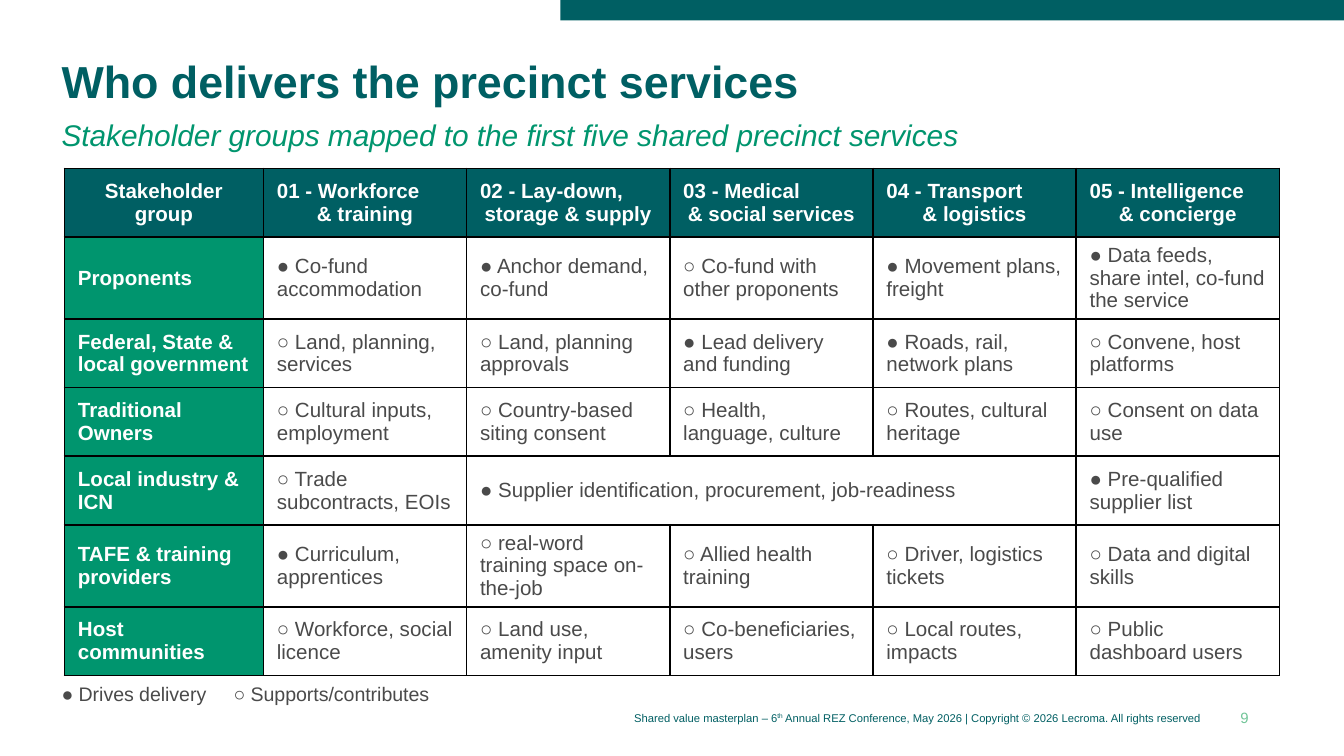
from lxml.etree import SubElement as Sub
from pptx import Presentation
from pptx.dml.color import RGBColor as RGB
from pptx.enum.shapes import MSO_SHAPE as SHAPE
from pptx.enum.text import MSO_ANCHOR as ANCHOR, PP_ALIGN as ALIGN
from pptx.oxml.ns import qn
from pptx.util import Inches, Pt

WIDE, HIGH = Inches(10), Inches(10 * 9 / 16)
FONT = "Arial"
HUES = {
    "teal": "005F63",
    "green": "00956E",
    "mint": "71C598",
    "grey": "4A4A4A",
    "white": "FFFFFF",
    "black": "000000",
}

# A line break in a heading puts its second line in the centre
HEADS = [
    "Stakeholder group",
    "01 - Workforce\n& training",
    "02 - Lay-down,\nstorage & supply",
    "03 - Medical\n& social services",
    "04 - Transport\n& logistics",
    "05 - Intelligence\n& concierge",
]
# None continues the cell to its left
ROWS = [
    ["Proponents", "● Co-fund accommodation", "● Anchor demand, co-fund",
     "○ Co-fund with other proponents", "● Movement plans, freight",
     "● Data feeds, share intel, co-fund the service"],
    ["Federal, State & local government", "○ Land, planning, services",
     "○ Land, planning approvals", "● Lead delivery and funding",
     "● Roads, rail, network plans", "○ Convene, host platforms"],
    ["Traditional Owners", "○ Cultural inputs, employment",
     "○ Country-based siting consent", "○ Health, language, culture",
     "○ Routes, cultural heritage", "○ Consent on data use"],
    ["Local industry & ICN", "○ Trade subcontracts, EOIs",
     "● Supplier identification, procurement, job-readiness", None, None,
     "● Pre-qualified supplier list"],
    ["TAFE & training providers", "● Curriculum, apprentices",
     "○ real-word training space on-the-job", "○ Allied health training",
     "○ Driver, logistics tickets", "○ Data and digital skills"],
    ["Host communities", "○ Workforce, social licence",
     "○ Land use, amenity input", "○ Co-beneficiaries, users",
     "○ Local routes, impacts", "○ Public dashboard users"],
]


def hue(name):
    return RGB.from_string(HUES[name])


def place(x, y, w, h):
    """Turn percentages of the slide into lengths."""
    return [int(side * part / 100)
            for side, part in zip((WIDE, HIGH, WIDE, HIGH), (x, y, w, h))]


def style(para, size, color, bold=False, slant=False, align=ALIGN.LEFT):
    para.alignment = align
    font = para.font
    font.name, font.size = FONT, Pt(size)
    font.bold, font.italic = bold, slant
    font.color.rgb = hue(color)


def add_text(slide, box, text, size, color, anchor=ANCHOR.TOP, space=1,
             tab=None, **look):
    frame = slide.shapes.add_textbox(*place(*box)).text_frame
    frame.word_wrap = True
    frame.vertical_anchor = anchor
    para = frame.paragraphs[0]
    para.text = text
    para.line_spacing = space
    if tab:
        stops = Sub(para._p.get_or_add_pPr(), qn("a:tabLst"))
        Sub(stops, qn("a:tab"), pos=str(int(WIDE * tab / 100)), algn="l")
    style(para, size, color, **look)
    return para


def add_bar(slide, box, color):
    bar = slide.shapes.add_shape(SHAPE.RECTANGLE, *place(*box))
    bar.shadow.inherit = False
    bar.fill.solid()
    bar.fill.fore_color.rgb = hue(color)
    bar.line.fill.background()


def set_edges(cell):
    props = cell._tc.get_or_add_tcPr()
    for at, side in enumerate(("lnL", "lnR", "lnT", "lnB")):
        line = Sub(props, qn("a:" + side), w=str(Pt(1)))
        props.insert(at, line)
        fill = Sub(line, qn("a:solidFill"))
        Sub(fill, qn("a:srgbClr"), val=HUES["black"])


def fill_cell(cell, text, back, color, bold, center):
    cell.fill.solid()
    cell.fill.fore_color.rgb = hue(back)
    cell.vertical_anchor = ANCHOR.MIDDLE
    # Slim margins keep the three-line rows low
    cell.margin_top = cell.margin_bottom = Inches(0.03)
    set_edges(cell)
    cell.text_frame.text = text or ""
    paras = cell.text_frame.paragraphs
    for para in paras:
        mid = center and para is paras[-1]
        style(para, 11, color, bold, align=ALIGN.CENTER if mid else ALIGN.LEFT)


def add_grid(slide, box, first, rows):
    count, total = len(rows), len(rows[0])
    table = slide.shapes.add_table(count, total, *place(*box)).table
    for at, col in enumerate(table.columns):
        share = (box[2] - first) / (total - 1) if at else first
        col.width = int(WIDE * share / 100)
    for y, row in enumerate(rows):
        for x, text in enumerate(row):
            if y == 0:
                look = ("teal", "white", True, True)
            elif x == 0:
                look = ("green", "white", True, False)
            else:
                look = ("white", "grey", False, False)
            fill_cell(table.cell(y, x), text, *look)
        # Merge each run of continued cells
        gaps = [x for x, text in enumerate(row) if text is None]
        if gaps:
            table.cell(y, gaps[0] - 1).merge(table.cell(y, gaps[-1]))


def add_footer(slide):
    para = add_text(slide, (40.9, 92.27, 49.4, 5.33),
                    "Shared value masterplan – 6", 6, "teal",
                    ANCHOR.MIDDLE, align=ALIGN.RIGHT)
    raised = para.add_run()
    raised.text = "th"
    raised._r.get_or_add_rPr().set("baseline", "30000")
    para.add_run().text = (" Annual REZ Conference, May 2026 | "
                           "Copyright © 2026 Lecroma. All rights reserved")
    add_text(slide, (90.8, 92.27, 3.6, 5.33), "9", 8, "mint",
             ANCHOR.MIDDLE, align=ALIGN.CENTER)


def main():
    deck = Presentation()
    deck.slide_width, deck.slide_height = WIDE, HIGH
    slide = deck.slides.add_slide(deck.slide_layouts[6])

    # Frame of the page
    add_bar(slide, (41.7, 0, 58.3, 2.7), "teal")
    add_footer(slide)

    # Headings
    add_text(slide, (3.6, 7, 80.8, 9.24),
             "Who delivers the precinct services", 24, "teal",
             space=0.9, bold=True)
    add_text(slide, (3.6, 15.11, 92.8, 9.24),
             "Stakeholder groups mapped to the first five shared precinct "
             "services", 16, "green", space=0.9, slant=True)

    # Service matrix and its key
    add_grid(slide, (4.8, 22.27, 90.4, 63.5), 14.8, [HEADS] + ROWS)
    add_text(slide, (3.6, 89.3, 55.6, 3.91),
             "● Drives delivery\t○ Supports/contributes", 10.5, "grey",
             tab=12.8)

    deck.save("out.pptx")


if __name__ == "__main__":
    main()
